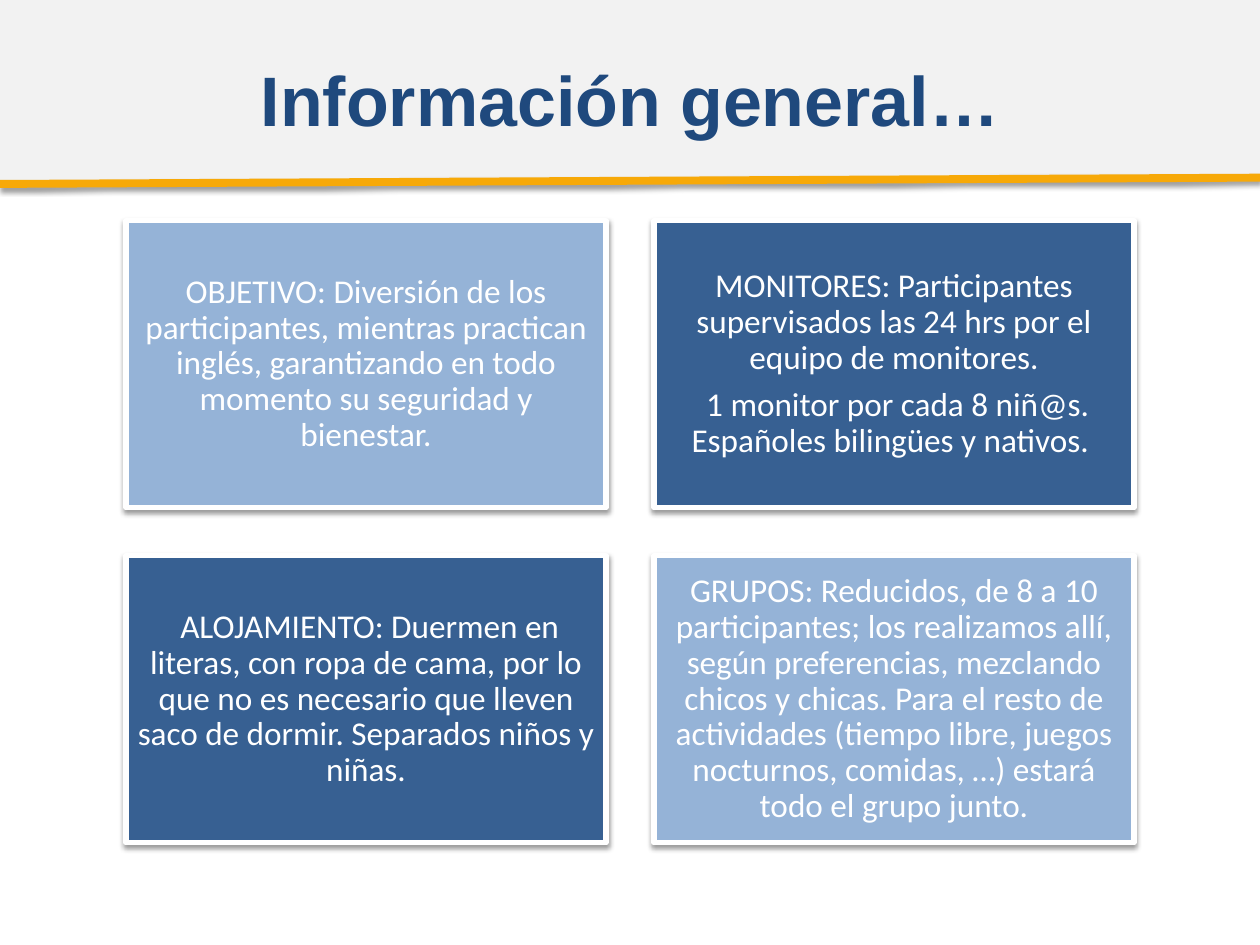
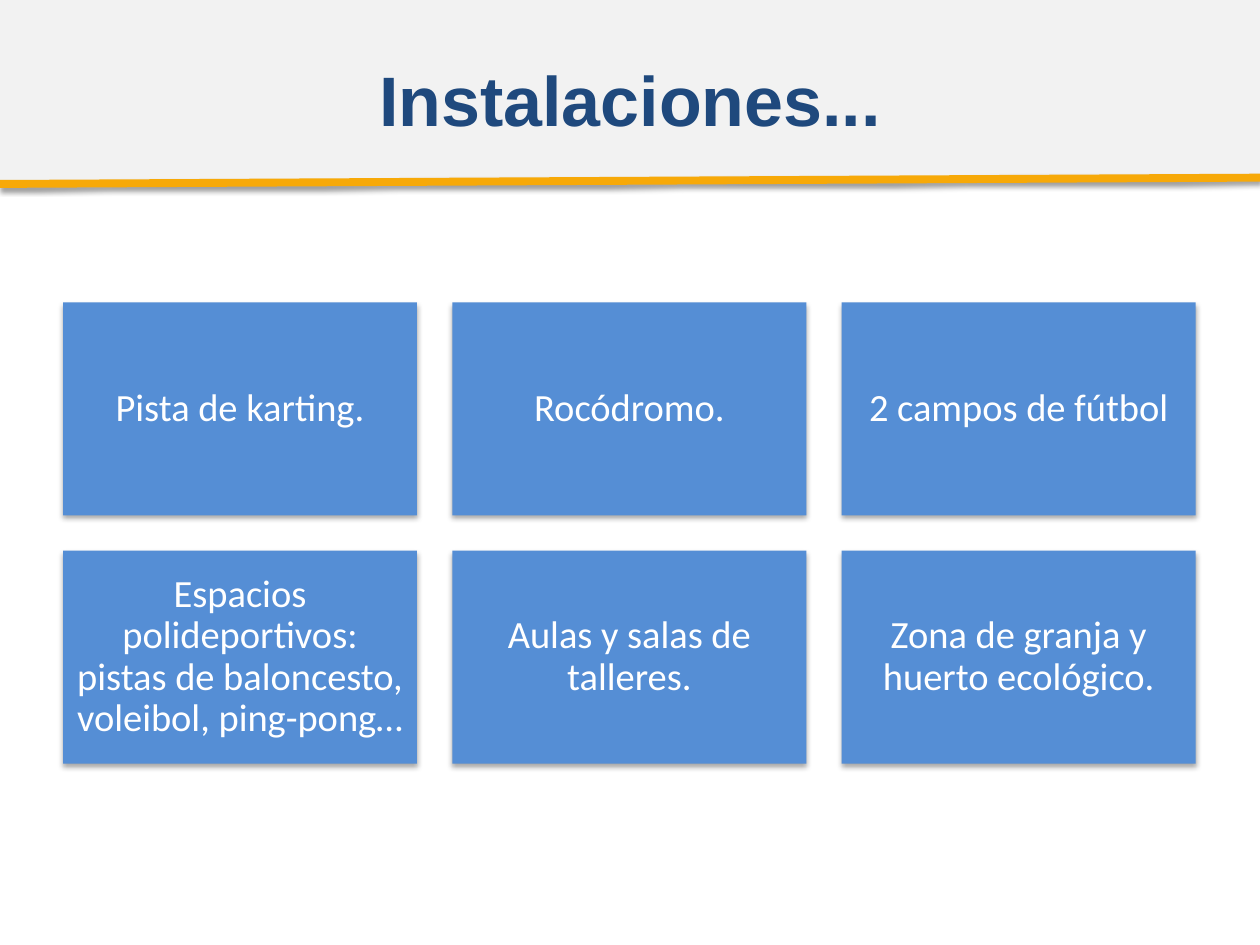
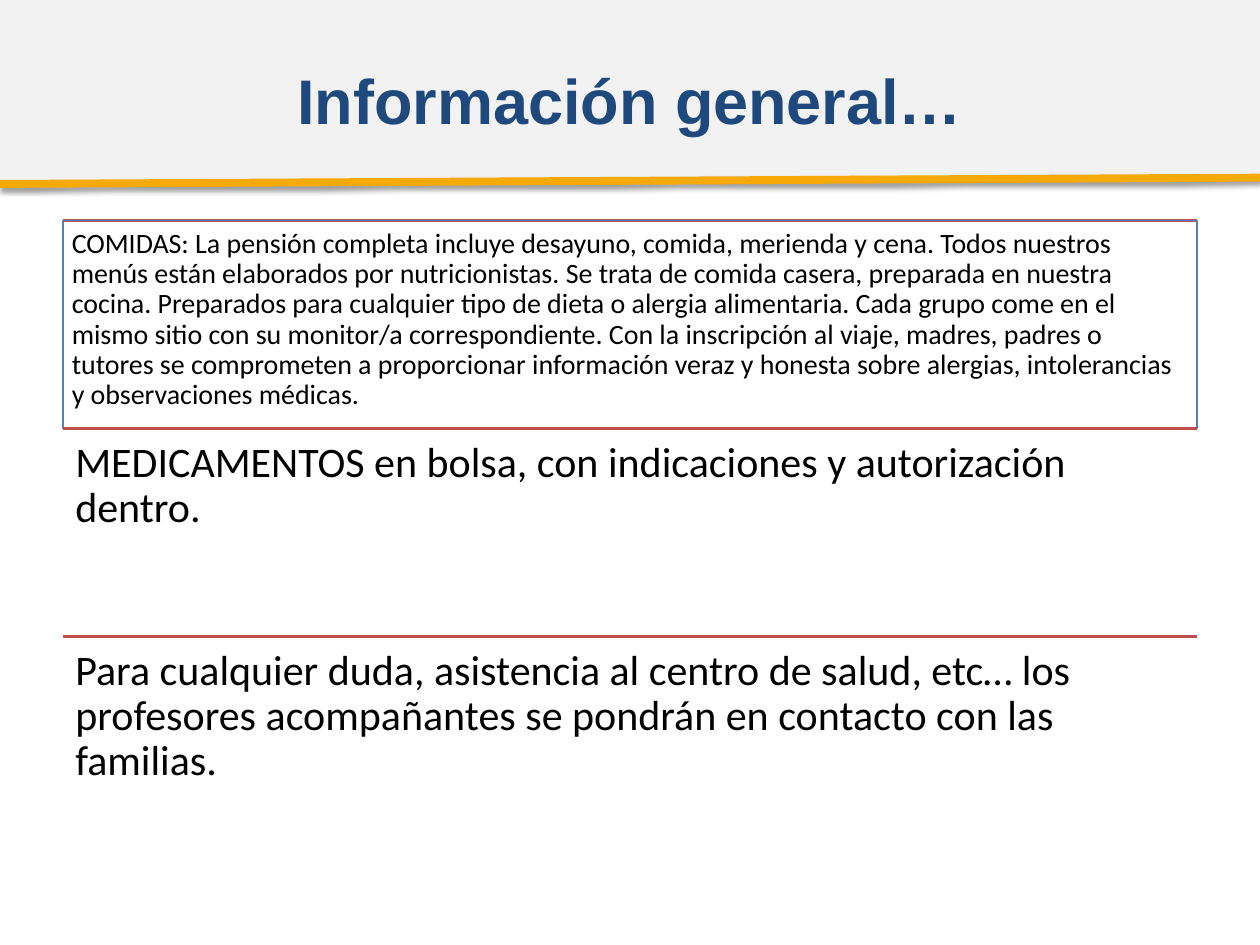
import dataclasses
import itertools

import lxml.etree
import pptx
import pptx.dml.color
import pptx.enum.shapes
import pptx.enum.text
import pptx.oxml.ns
import pptx.util

Inches = pptx.util.Inches
Pt = pptx.util.Pt
qn = pptx.oxml.ns.qn
ALIGN = pptx.enum.text.PP_ALIGN
ANCHOR = pptx.enum.text.MSO_ANCHOR


@dataclasses.dataclass(frozen=True)
class Theme:
    band: str = "F2F2F2"
    band_edge: str = "F7A908"
    title: str = "1F497D"
    light: str = "95B3D7"
    dark: str = "376092"
    tile: str = "558ED5"
    rule: str = "C0504D"
    frame: str = "4F81BD"
    white: str = "FFFFFF"
    black: str = "000000"
    title_font: str = "Arial"
    body_font: str = "Calibri"
    title_size: int = 40
    title_small: int = 36
    info_size: int = 19
    tile_size: int = 22
    meals_size: int = 16
    note_size: int = 24


T = Theme()


def rgb(value):
    return pptx.dml.color.RGBColor.from_string(value)


def box(left, top, width, height):
    return [Inches(v) for v in (left, top, width, height)]


def add_shadow(sp, alpha, dist):
    effects = sp._element.spPr.find(qn("a:effectLst"))
    shadow = lxml.etree.SubElement(
        effects, qn("a:outerShdw"), blurRad=str(Pt(3.1)), dist=str(Pt(dist)),
        dir="5400000", rotWithShape="0")
    color = lxml.etree.SubElement(shadow, qn("a:srgbClr"), val=T.black)
    lxml.etree.SubElement(color, qn("a:alpha"), val=str(alpha * 1000))


def add_rect(slide, bounds, fill=None, line=None, width=0.75):
    sp = slide.shapes.add_shape(
        pptx.enum.shapes.MSO_SHAPE.RECTANGLE, *box(*bounds))
    sp.shadow.inherit = False
    if fill:
        sp.fill.solid()
        sp.fill.fore_color.rgb = rgb(fill)
    else:
        sp.fill.background()
    if line:
        sp.line.color.rgb = rgb(line)
        sp.line.width = Pt(width)
    else:
        sp.line.fill.background()
    return sp


def add_rule(slide, start, end, color, width):
    sp = slide.shapes.add_connector(
        pptx.enum.shapes.MSO_CONNECTOR.STRAIGHT,
        *[Inches(v) for v in start + end])
    sp.line.color.rgb = rgb(color)
    sp.line.width = Pt(width)
    lxml.etree.SubElement(sp._element.spPr, qn("a:effectLst"))
    return sp


def add_run(p, text, size, color, font=T.body_font, bold=False):
    r = p.add_run()
    r.text = text
    r.font.name = font
    r.font.size = Pt(size)
    r.font.bold = bold
    r.font.color.rgb = rgb(color)


def set_frame(sp, anchor, inset):
    tf = sp.text_frame
    tf.word_wrap = True
    tf.vertical_anchor = anchor
    tf.margin_left = tf.margin_right = Inches(inset)
    tf.margin_top = tf.margin_bottom = Inches(inset)
    return tf


def write_body(sp, texts, size, color, align, anchor, inset):
    tf = set_frame(sp, anchor, inset)
    for i, text in enumerate(texts):
        p = tf.add_paragraph() if i else tf.paragraphs[0]
        p.alignment = align
        p.line_spacing = 0.9
        p.space_after = Pt(round(size * 0.35, 2))
        add_run(p, text, size, color)


def add_titled_slide(prs, title, size=T.title_size):
    slide = prs.slides.add_slide(prs.slide_layouts[6])
    add_rect(slide, (0, 0, 10, 1.43), T.band)
    edge = add_rule(slide, (0, 1.46), (10, 1.41), T.band_edge, 4.5)
    add_shadow(edge, 38, 1.6)
    sp = slide.shapes.add_textbox(*box(0.5, 0.16, 9, 1.25))
    p = set_frame(sp, ANCHOR.MIDDLE, 0.1).paragraphs[0]
    p.alignment = ALIGN.CENTER
    add_run(p, title, size, T.title, T.title_font, True)
    return slide


def grid(left, top, width, height, gap, columns, rows):
    for row, col in itertools.product(range(rows), range(columns)):
        yield (left + col * (width + gap), top + row * (height + gap),
               width, height)


def add_info_cards(slide, cards):
    fills = (T.light, T.dark, T.dark, T.light)
    cells = grid(1, 1.75, 3.81, 2.28, 0.38, 2, 2)
    for bounds, fill, texts in zip(cells, fills, cards):
        sp = add_rect(slide, bounds, fill, T.white, 3)
        add_shadow(sp, 38, 1.6)
        write_body(sp, texts, T.info_size, T.white,
                   ALIGN.CENTER, ANCHOR.MIDDLE, 0.08)


def add_facility_tiles(slide, names):
    cells = grid(0.5, 2.4, 2.81, 1.69, 0.28, 3, 2)
    for bounds, name in zip(cells, names):
        sp = add_rect(slide, bounds, T.tile)
        add_shadow(sp, 35, 1.8)
        write_body(sp, [name], T.tile_size, T.white,
                   ALIGN.CENTER, ANCHOR.MIDDLE, 0.09)


def add_notices(slide, notices):
    height = 1.65
    for i, (text, size, inset, framed) in enumerate(notices):
        top = 1.75 + i * height
        bounds = (0.5, top, 9, height)
        add_rule(slide, (0.5, top), (9.5, top), T.rule, 2)
        if framed:
            sp = add_rect(slide, bounds, line=T.frame)
        else:
            sp = slide.shapes.add_textbox(*box(*bounds))
        write_body(sp, [text], size, T.black, ALIGN.LEFT, ANCHOR.TOP, inset)


def main():
    prs = pptx.Presentation()
    prs.slide_width = Inches(10)
    prs.slide_height = Inches(7.5)

    add_info_cards(add_titled_slide(prs, "Información general…"), [
        ["OBJETIVO: Diversión de los participantes, mientras practican "
         "inglés, garantizando en todo momento su seguridad y bienestar."],
        ["MONITORES: Participantes supervisados las 24 hrs por el equipo "
         "de monitores.",
         " 1 monitor por cada 8 niñ@s. Españoles bilingües y nativos. "],
        [" ALOJAMIENTO: Duermen en literas, con ropa de cama, por lo que no "
         "es necesario que lleven saco de dormir. Separados niños y niñas."],
        ["GRUPOS: Reducidos, de 8 a 10 participantes; los realizamos allí, "
         "según preferencias, mezclando chicos y chicas. Para el resto de "
         "actividades (tiempo libre, juegos nocturnos, comidas, …) estará "
         "todo el grupo junto."],
    ])

    add_facility_tiles(add_titled_slide(prs, "Instalaciones..."), [
        "Pista de karting.",
        "Rocódromo.",
        "2 campos de fútbol",
        "Espacios polideportivos: pistas de baloncesto, voleibol, "
        "ping-pong… ",
        "Aulas y salas de talleres.",
        "Zona de granja y huerto ecológico.",
    ])

    slide = add_titled_slide(prs, "Información general…", T.title_small)
    add_notices(slide, [
        ("COMIDAS: La pensión completa incluye desayuno, comida, merienda y "
         "cena. Todos nuestros menús están elaborados por nutricionistas. "
         "Se trata de comida casera, preparada en nuestra cocina. Preparados "
         "para cualquier tipo de dieta o alergia alimentaria. Cada grupo "
         "come en el mismo sitio con su monitor/a correspondiente. Con la "
         "inscripción al viaje, madres, padres o tutores se comprometen a "
         "proporcionar información veraz y honesta sobre alergias, "
         "intolerancias y observaciones médicas.", T.meals_size, 0.07, True),
        ("MEDICAMENTOS en bolsa, con indicaciones y autorización dentro.",
         T.note_size, 0.1, False),
        ("Para cualquier duda, asistencia al centro de salud, etc… los "
         "profesores acompañantes se pondrán en contacto con las familias.",
         T.note_size, 0.1, False),
    ])

    prs.save("out.pptx")


if __name__ == "__main__":
    main()
